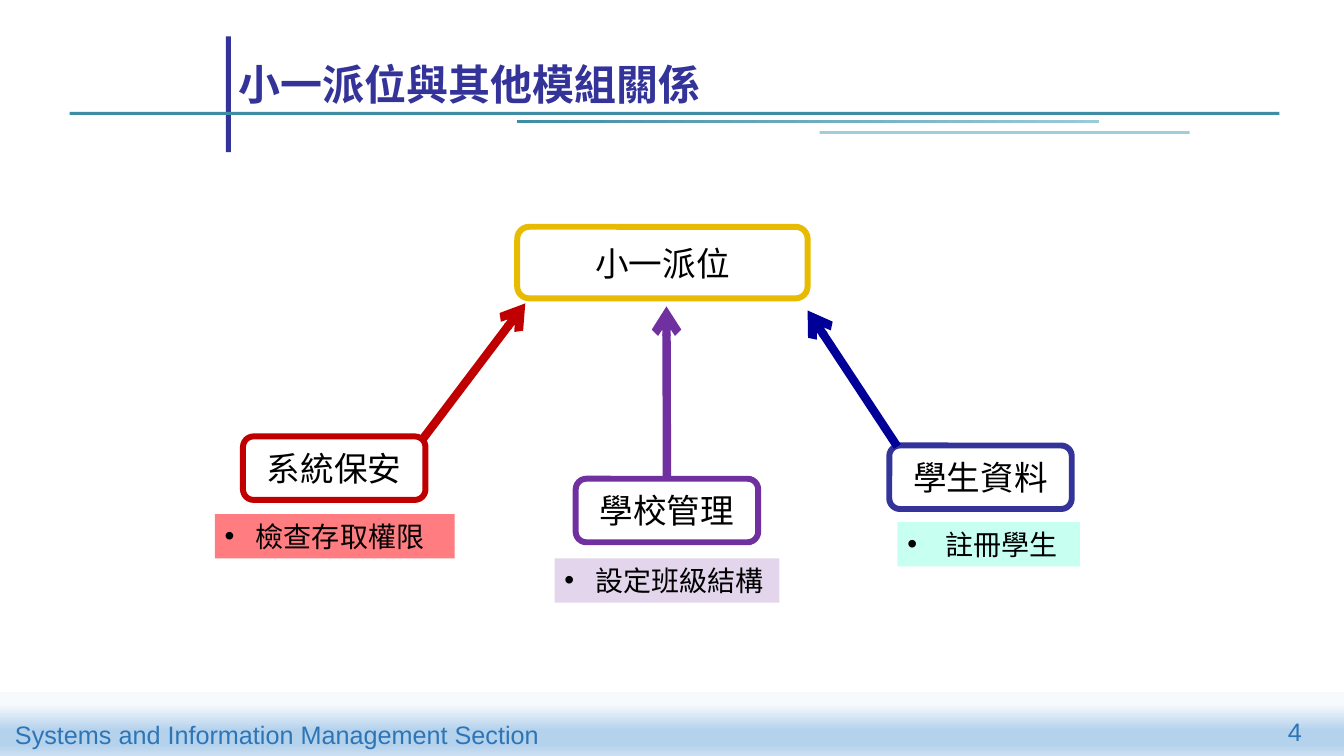
from pptx import Presentation
from pptx.dml.color import RGBColor
from pptx.enum import shapes as kinds, text as txt
from pptx.oxml.ns import qn
from pptx.util import Inches, Pt
from lxml import etree

CJK = "Noto Sans CJK SC"
RECT = kinds.MSO_SHAPE.RECTANGLE
ROUND = kinds.MSO_SHAPE.ROUNDED_RECTANGLE
LEFT, CENTER, RIGHT = txt.PP_ALIGN.LEFT, txt.PP_ALIGN.CENTER, txt.PP_ALIGN.RIGHT
TOP, MIDDLE, BOTTOM = (txt.MSO_ANCHOR.TOP, txt.MSO_ANCHOR.MIDDLE,
                       txt.MSO_ANCHOR.BOTTOM)


def rgb(value):
    return RGBColor.from_string(value)


def add(parent, tag, **attributes):
    return etree.SubElement(parent, qn(tag), attributes)


def panel(slide, at, color, kind=RECT, border=None, opacity=100):
    shape = slide.shapes.add_shape(kind, *map(Inches, at))
    shape.shadow.inherit = False
    shape.fill.solid()
    shape.fill.fore_color.rgb = rgb(color)
    if opacity < 100:
        tint = shape.fill._xPr.find(qn("a:solidFill"))[0]
        add(tint, "a:alpha", val=str(opacity * 1000))
    if border:
        shape.line.color.rgb = rgb(border)
        shape.line.width = Pt(4.25)
    else:
        shape.line.fill.background()
    return shape


def gradient_panel(slide, at, stops, angle):
    shape = panel(slide, at, stops[0][1])
    shape.fill.gradient()
    shape.fill.gradient_angle = angle
    stop_list = shape.fill._xPr.find(qn("a:gradFill")).find(qn("a:gsLst"))
    for stop in list(stop_list):
        stop_list.remove(stop)
    for position, color in stops:
        stop = add(stop_list, "a:gs", pos=str(position * 1000))
        add(stop, "a:srgbClr", val=color)


def write(shape, words, size, color="000000", font=CJK, bold=False,
          align=LEFT, anchor=TOP, wrap=True, indent=None):
    frame = shape.text_frame
    frame.word_wrap = wrap
    frame.vertical_anchor = anchor
    paragraph = frame.paragraphs[0]
    paragraph.alignment = align
    if indent:
        properties = paragraph._p.get_or_add_pPr()
        properties.set("marL", str(Inches(indent)))
        properties.set("indent", str(-Inches(indent)))
        add(properties, "a:buFont", typeface="Arial")
        add(properties, "a:buChar", char="•")
    run = paragraph.add_run()
    run.text = words
    run.font.name = font
    run.font.size = Pt(size)
    run.font.bold = bold
    run.font.color.rgb = rgb(color)
    add(run._r.get_or_add_rPr(), "a:ea", typeface=CJK)


def label(slide, at, words, size, color, **options):
    write(slide.shapes.add_textbox(*map(Inches, at)), words, size, color,
          font="Arial", **options)


def module(slide, at, words, color):
    box = panel(slide, at, "FFFFFF", ROUND, color)
    write(box, words, 24, align=CENTER, anchor=MIDDLE)
    return box


def arrow(slide, start, end, color):
    line = slide.shapes.add_connector(
        kinds.MSO_CONNECTOR.STRAIGHT, *map(Inches, start + end))
    line.line.color.rgb = rgb(color)
    line.line.width = Pt(6)
    add(line.line._get_or_add_ln(), "a:tailEnd", type="arrow")
    add(line._element.spPr, "a:effectLst")
    return line


def task(slide, at, words, color, indent=0.31, opacity=100):
    write(panel(slide, at, color, opacity=opacity), words, 20, indent=indent)


def backdrop(slide):
    gradient_panel(slide, (0, 6.87, 13.33, 0.64),
                   [(18, "F7FAFD"), (58, "B5D2EC"), (81, "B5D2EC"), (100, "CEE1F2")],
                   270)
    panel(slide, (2.24, 0.36, 0.05, 1.15), "333399")
    panel(slide, (0.69, 1.11, 12, 0.03), "3F8DA5")
    gradient_panel(slide, (5.13, 1.19, 5.77, 0.03),
                   [(0, "3F8DA5"), (100, "9BCAD9")], 0)
    panel(slide, (8.13, 1.3, 3.67, 0.03), "A1CDDB")
    label(slide, (0.05, 7.09, 5.45, 0.4), "Systems and Information Management Section",
          18, "2E75B6", wrap=False)
    label(slide, (11.7, 7.06, 1.31, 0.5), "4", 18, "2E75B6", align=RIGHT)


def main():
    deck = Presentation()
    deck.slide_width, deck.slide_height = Inches(13.33), Inches(7.5)
    slide = deck.slides.add_slide(deck.slide_layouts[6])
    backdrop(slide)
    module(slide, (5.13, 2.25, 2.88, 0.71), "小一派位", "E7BB01")

    school = module(slide, (5.71, 4.75, 1.81, 0.63), "學校管理", "7030A0")
    school_arrow = arrow(slide, (6.61, 4.75), (6.61, 3.04), "7030A0")
    school_arrow.begin_connect(school, 0)
    task(slide, (5.5, 5.54, 2.23, 0.44), "設定班級結構", "7030A0", opacity=20)

    module(slide, (8.82, 4.42, 1.81, 0.63), "學生資料", "333399")
    arrow(slide, (8.9, 4.43), (8.01, 3.08), "000099")
    task(slide, (8.9, 5.18, 1.81, 0.44), "註冊學生", "C7FFF0", indent=0.38)

    module(slide, (2.41, 4.33, 1.81, 0.63), "系統保安", "C00000")
    arrow(slide, (4.19, 4.36), (5.21, 3.01), "C00000")
    task(slide, (2.13, 5.1, 2.38, 0.44), "檢查存取權限", "FF7C80")

    label(slide, (2.27, 0.3, 10.44, 0.83), "小一派位與其他模組關係", 30, "333399",
          bold=True, anchor=BOTTOM)
    deck.save("out.pptx")


if __name__ == "__main__":
    main()
